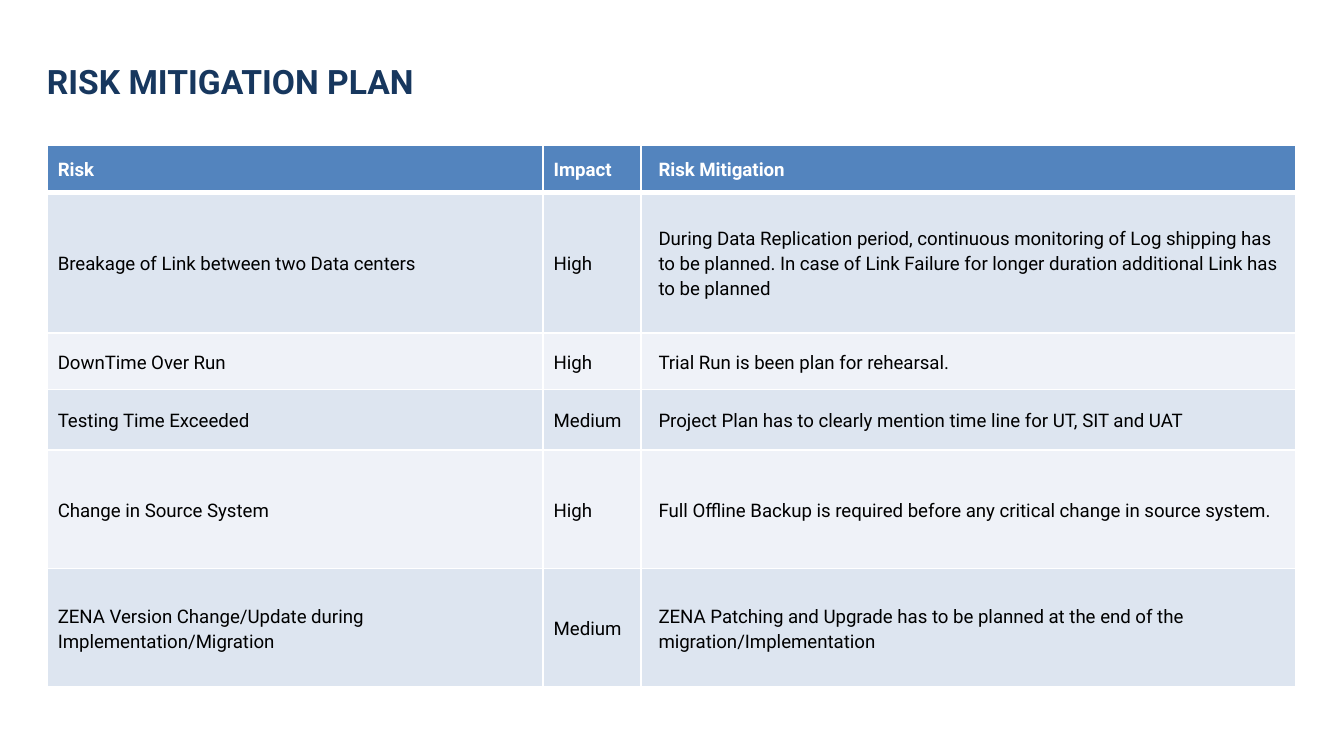
from lxml.etree import SubElement
from pptx import Presentation
from pptx.dml.color import RGBColor
from pptx.enum.text import MSO_ANCHOR as Anchor
from pptx.oxml.ns import qn
from pptx.util import Inches, Pt

FONT = "Roboto"
WHITE, BLACK, NAVY = "FFFFFF", "000000", "17375E"
HEADER_FILL = "5384BE"
BAND_FILLS = ("DDE5F0", "EFF2F8")

SLIDE_WIDTH = Inches(10)
SLIDE_HEIGHT = SLIDE_WIDTH * 9 // 16
LEFT = 0.35
COLUMN_WIDTHS = (3.69, 0.73, 4.87)
ROW_HEIGHTS = (0.35, 1.05, 0.42, 0.45, 0.88, 0.88)
MITIGATION_INDENT = 0.05
RISKS = (
    ("Risk", "Impact", "Risk Mitigation"),
    ("Breakage of Link between two Data centers", "High",
     "During Data Replication period, continuous monitoring of Log shipping has "
     "to be planned. In case of Link Failure for longer duration additional Link "
     "has to be planned"),
    ("DownTime Over Run", "High", "Trial Run is been plan for rehearsal."),
    ("Testing Time Exceeded", "Medium",
     "Project Plan has to clearly mention time line for UT, SIT and UAT"),
    ("Change in Source System", "High",
     "Full Offline Backup is required before any critical change in source system."),
    ("ZENA Version Change/Update during Implementation/Migration", "Medium",
     "ZENA Patching and Upgrade has to be planned at the end of the "
     "migration/Implementation"),
)


def rgb(color):
    return RGBColor.from_string(color)


def apply_format(target, values):
    for attribute, value in values.items():
        setattr(target, attribute, value)


def style_font(paragraph, size, color, bold):
    apply_format(paragraph.font, {"name": FONT, "size": Pt(size), "bold": bold})
    paragraph.font.color.rgb = rgb(color)


def add_borders(cell, bottom_width):
    """Draw white borders, 1 pt wide except at the bottom."""
    properties = cell._tc.get_or_add_tcPr()
    for side, width in (("L", 1), ("R", 1), ("T", 1), ("B", bottom_width)):
        line = SubElement(properties, qn(f"a:ln{side}"), w=str(Pt(width)))
        fill = SubElement(line, qn("a:solidFill"))
        SubElement(fill, qn("a:srgbClr"), val=WHITE)


def fill_cell(cell, text, is_header, fill, indent):
    apply_format(cell, {
        "text": text, "vertical_anchor": Anchor.MIDDLE,
        "margin_left": Inches(0.08), "margin_right": Inches(0.08),
        "margin_top": 0, "margin_bottom": 0,
    })
    paragraph = cell.text_frame.paragraphs[0]
    paragraph.line_spacing = 1.15
    if indent:
        paragraph._p.get_or_add_pPr().set("marL", str(Inches(indent)))
    style_font(paragraph, 10, WHITE if is_header else BLACK, is_header)
    add_borders(cell, 3 if is_header else 1)
    cell.fill.solid()
    cell.fill.fore_color.rgb = rgb(fill)


def add_risk_table(slide):
    table = slide.shapes.add_table(
        len(RISKS), len(COLUMN_WIDTHS), Inches(LEFT), Inches(1.08),
        Inches(sum(COLUMN_WIDTHS)), Inches(sum(ROW_HEIGHTS))).table
    for column, width in zip(table.columns, COLUMN_WIDTHS):
        column.width = Inches(width)
    for row, height in zip(table.rows, ROW_HEIGHTS):
        row.height = Inches(height)
    for r, risk in enumerate(RISKS):
        is_header = r == 0
        fill = HEADER_FILL if is_header else BAND_FILLS[(r - 1) % 2]
        for c, text in enumerate(risk):
            indent = MITIGATION_INDENT if c == 2 else 0
            fill_cell(table.cell(r, c), text, is_header, fill, indent)


def add_title(slide, text):
    frame = slide.shapes.add_textbox(
        Inches(LEFT), Inches(0.4), Inches(8.24), Inches(0.4)).text_frame
    apply_format(frame, {
        "text": text, "word_wrap": True, "vertical_anchor": Anchor.MIDDLE,
        "margin_left": 0, "margin_right": Inches(0.1),
        "margin_top": Inches(0.05), "margin_bottom": Inches(0.05),
    })
    style_font(frame.paragraphs[0], 18, NAVY, True)


def main():
    presentation = Presentation()
    apply_format(presentation, {"slide_width": SLIDE_WIDTH, "slide_height": SLIDE_HEIGHT})
    slide = presentation.slides.add_slide(presentation.slide_layouts[6])
    add_risk_table(slide)
    add_title(slide, "RISK MITIGATION PLAN")
    presentation.save("out.pptx")


if __name__ == "__main__":
    main()
